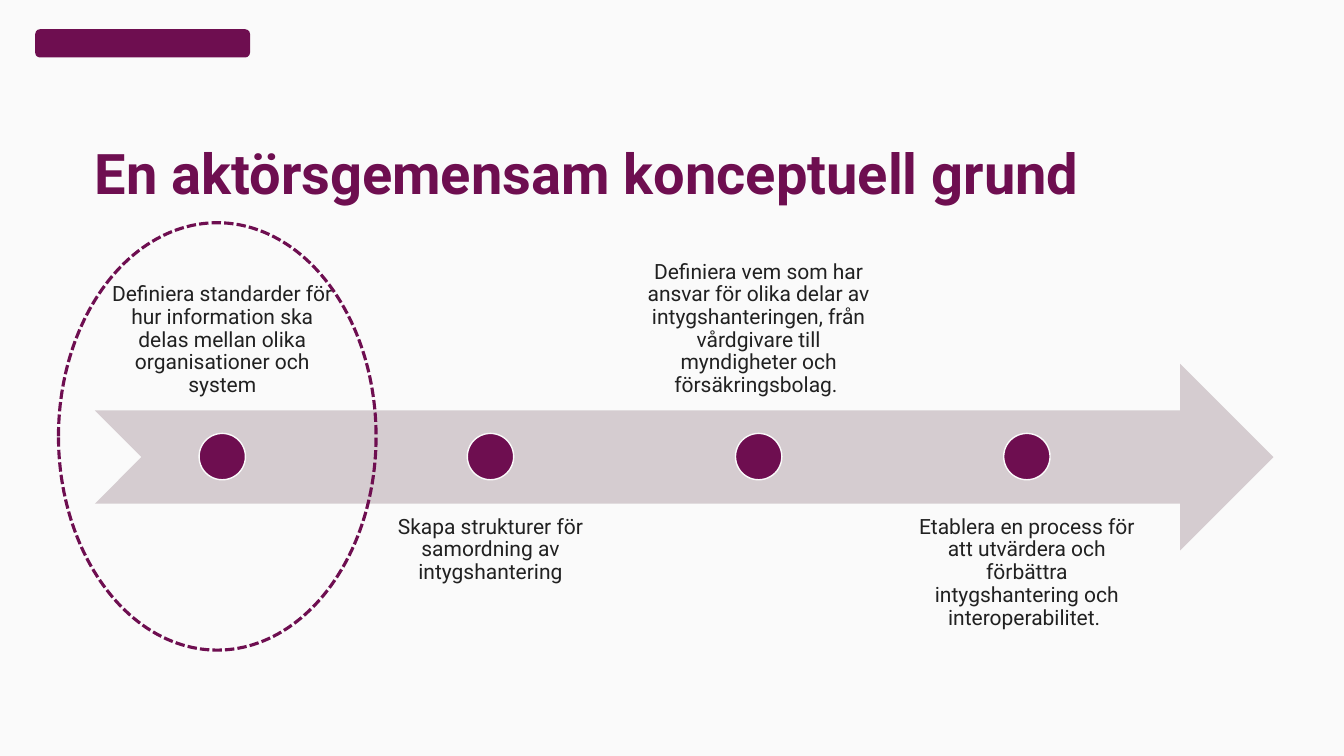
import pptx
import pptx.dml.color
import pptx.enum.dml
import pptx.enum.shapes
import pptx.enum.text
import pptx.util

Inches = pptx.util.Inches
Pt = pptx.util.Pt
RGBColor = pptx.dml.color.RGBColor
Shape = pptx.enum.shapes.MSO_SHAPE
Anchor = pptx.enum.text.MSO_ANCHOR
Align = pptx.enum.text.PP_ALIGN

PLUM = RGBColor(0x6E, 0x0E, 0x50)
MAUVE = RGBColor(0xD5, 0xCC, 0xD0)
INK = RGBColor(0x21, 0x21, 0x21)
PAPER = RGBColor(0xFA, 0xFA, 0xFA)

STEPS = [
    "Definiera standarder för hur information ska delas mellan olika organisationer och system",
    "Skapa strukturer för samordning av intygshantering",
    "Definiera vem som har ansvar för olika delar av intygshanteringen, "
    "från vårdgivare till myndigheter och försäkringsbolag. ",
    "Etablera en process för att utvärdera och förbättra intygshantering och interoperabilitet. ",
]
STEP_LEFT, STEP_PITCH = 0.94, 2.66
STEP_WIDTH, STEP_HEIGHT = 2.53, 1.85
ABOVE_TOP, BELOW_TOP = 2.21, 5.0
DOT_SIZE, DOT_TOP = 0.46, 4.3


class TimelineSlide:
    font = "Roboto"

    def __init__(self, presentation):
        self.slide = presentation.slides.add_slide(presentation.slide_layouts[6])
        self.slide.background.fill.solid()
        self.slide.background.fill.fore_color.rgb = PAPER

    def add_shape(self, preset, left, top, width, height, fill=None, line=None, line_width=1, dash=None):
        shape = self.slide.shapes.add_shape(
            preset, Inches(left), Inches(top), Inches(width), Inches(height))
        shape.shadow.inherit = False
        if fill is None:
            shape.fill.background()
        else:
            shape.fill.solid()
            shape.fill.fore_color.rgb = fill
        if line is None:
            shape.line.fill.background()
        else:
            shape.line.color.rgb = line
            shape.line.width = Pt(line_width)
            shape.line.dash_style = dash
        return shape

    def add_text(self, text, left, top, width, height, size=15, color=INK, bold=False,
                 align=Align.CENTER, anchor=Anchor.TOP, inset=0.12):
        box = self.slide.shapes.add_textbox(
            Inches(left), Inches(top), Inches(width), Inches(height))
        frame = box.text_frame
        frame.word_wrap = True
        frame.vertical_anchor = anchor
        frame.margin_left = frame.margin_right = Inches(inset)
        frame.margin_top = frame.margin_bottom = Inches(inset)
        paragraph = frame.paragraphs[0]
        paragraph.alignment = align
        paragraph.line_spacing = 0.9
        run = paragraph.add_run()
        run.text = text
        run.font.name = self.font
        run.font.size = Pt(size)
        run.font.bold = bold
        run.font.color.rgb = color
        return box

    def add_step(self, index, text):
        """Place a dot on the arrow, with its text alternately above and below."""
        left = STEP_LEFT + index * STEP_PITCH
        above = index % 2 == 0
        self.add_text(text, left, ABOVE_TOP if above else BELOW_TOP, STEP_WIDTH, STEP_HEIGHT,
                      anchor=Anchor.BOTTOM if above else Anchor.TOP)
        self.add_shape(Shape.OVAL, left + (STEP_WIDTH - DOT_SIZE) / 2, DOT_TOP,
                       DOT_SIZE, DOT_SIZE, fill=PLUM, line=PAPER)


def main():
    presentation = pptx.Presentation()
    presentation.slide_width = Inches(13.33)
    presentation.slide_height = Inches(7.5)

    timeline = TimelineSlide(presentation)
    timeline.add_shape(Shape.ROUNDED_RECTANGLE, 0.35, 0.29, 2.13, 0.28, fill=PLUM)
    timeline.add_text("En aktörsgemensam konceptuell grund", 0.94, 0.84, 10.91, 1.21,
                      size=40, color=PLUM, bold=True, align=Align.LEFT,
                      anchor=Anchor.BOTTOM, inset=0)
    timeline.add_shape(Shape.NOTCHED_RIGHT_ARROW, 0.94, 3.61, 11.69, 1.85, fill=MAUVE)
    for index, text in enumerate(STEPS):
        timeline.add_step(index, text)
    timeline.add_shape(Shape.OVAL, 0.58, 2.21, 3.15, 4.24, line=PLUM, line_width=2.25,
                       dash=pptx.enum.dml.MSO_LINE.SQUARE_DOT)

    presentation.save("out.pptx")


if __name__ == "__main__":
    main()
